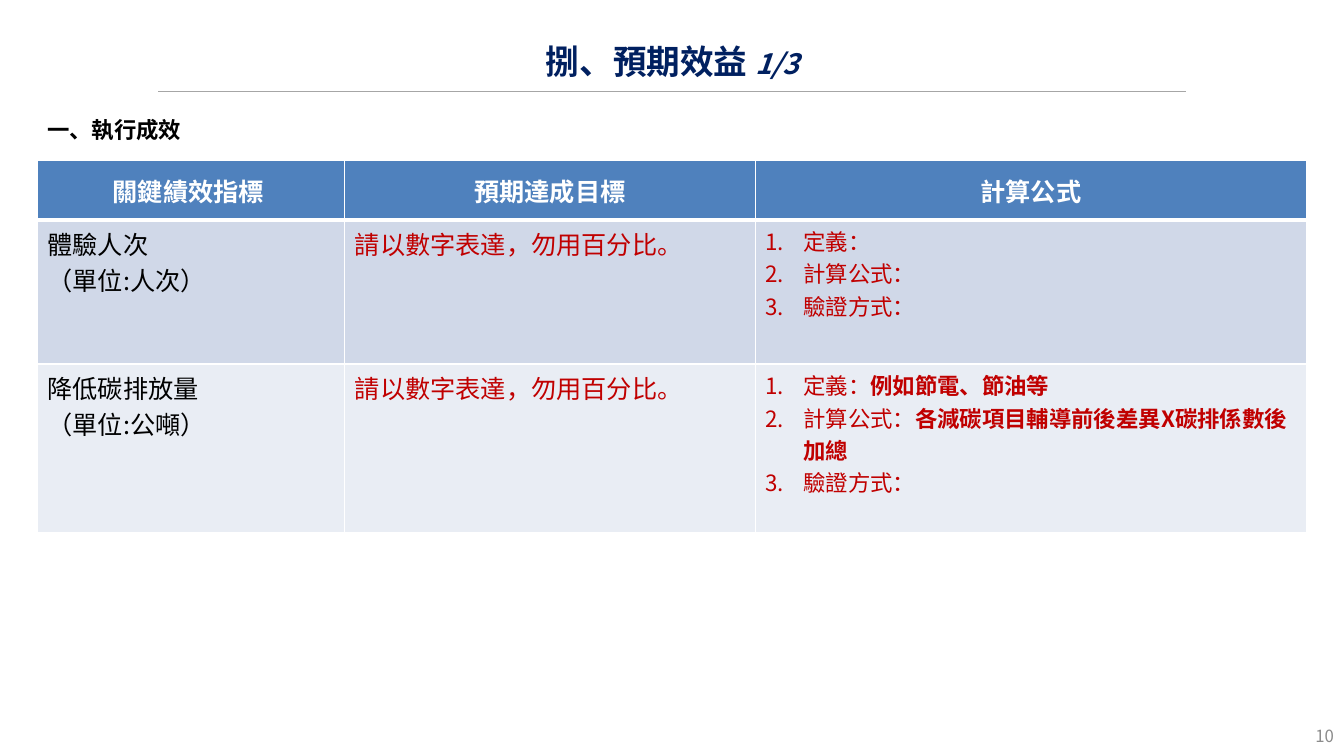
import dataclasses
import typing

import lxml.etree
import pptx
import pptx.dml.color
import pptx.enum.shapes
import pptx.enum.text
import pptx.oxml.ns
import pptx.util

FONT = "Noto Sans CJK SC"
HUES = {
    "navy": "002060",
    "black": "000000",
    "white": "FFFFFF",
    "red": "C00000",
    "gray": "8C8C8C",
    "rule": "A6A6A6",
    "head": "4F81BD",
    "dark": "D0D8E8",
    "light": "E9EDF4",
}
WIDE = pptx.util.Inches(13.33)
HIGH = pptx.util.Inches(7.5)
HANG = pptx.util.Inches(0.38)
COLS = (22.88, 30.53, 41.04)
ROWS = (7.87, 19.07, 22.27)
ALIGN = pptx.enum.text.PP_ALIGN
MID = pptx.enum.text.MSO_ANCHOR.MIDDLE
TOP = pptx.enum.text.MSO_ANCHOR.TOP


@dataclasses.dataclass(frozen=True)
class Run:
    text: str
    bold: bool = False
    slant: bool = False
    size: typing.Optional[float] = None


@dataclasses.dataclass(frozen=True)
class Label:
    box: tuple[float, float, float, float]
    runs: tuple[Run, ...]
    size: float
    hue: str
    align: ALIGN = ALIGN.LEFT
    anchor: typing.Any = TOP


@dataclasses.dataclass(frozen=True)
class Goal:
    name: str
    unit: str
    fill: str
    means: str = ""
    sum: str = ""


LABELS = (
    Label((16.95, 4.13, 66.17, 7.87),
          (Run("捌、預期效益 ", True), Run("1/3", True, True, 20)),
          24, "navy", ALIGN.CENTER, MID),
    Label((2.78, 14.67, 23.03, 4.93),
          (Run("一、執行成效", True),), 16, "black"),
    Label((95, 94.67, 5, 5.33), (Run("10"),), 12, "gray", ALIGN.RIGHT, MID),
)
HEADS = ("關鍵績效指標 ", "預期達成目標", "計算公式")
GOALS = (
    Goal("體驗人次", "（單位:人次）", "dark"),
    Goal("降低碳排放量", "（單位:公噸）", "light",
         "例如節電、節油等", "各減碳項目輔導前後差異X碳排係數後加總"),
)


def across(share: float) -> int:
    return round(WIDE * share / 100)


def down(share: float) -> int:
    return round(HIGH * share / 100)


def color(name: str) -> pptx.dml.color.RGBColor:
    return pptx.dml.color.RGBColor.from_string(HUES[name])


def add(node: typing.Any, tag: str, **attrs: str) -> typing.Any:
    return lxml.etree.SubElement(node, pptx.oxml.ns.qn(tag), attrs)


def write(frame: typing.Any, lines: typing.Sequence[tuple[Run, ...]], *,
          size: float, hue: str, align: ALIGN = ALIGN.LEFT,
          count: bool = False) -> None:
    frame.word_wrap = True
    for spot, runs in enumerate(lines):
        para = frame.paragraphs[0] if spot == 0 else frame.add_paragraph()
        para.alignment = align
        if count:
            props = para._p.get_or_add_pPr()
            props.set("marL", str(HANG))
            props.set("indent", str(-HANG))
            add(props, "a:buFont", typeface=FONT)
            add(props, "a:buAutoNum", type="arabicPeriod")
        for item in runs:
            run = para.add_run()
            run.text = item.text
            run.font.size = pptx.util.Pt(item.size or size)
            run.font.bold = item.bold
            run.font.italic = item.slant
            run.font.color.rgb = color(hue)
            run.font.name = FONT
            add(run._r.get_or_add_rPr(), "a:ea", typeface=FONT)


def label(slide: typing.Any, item: Label) -> None:
    left, top, width, height = item.box
    box = slide.shapes.add_textbox(
        across(left), down(top), across(width), down(height))
    box.text_frame.vertical_anchor = item.anchor
    write(box.text_frame, [item.runs], size=item.size, hue=item.hue,
          align=item.align)


def rule(slide: typing.Any) -> None:
    line = slide.shapes.add_connector(
        pptx.enum.shapes.MSO_CONNECTOR.STRAIGHT,
        across(11.78), down(12.13), across(88.22), down(12.13))
    line.line.color.rgb = color("rule")
    line.line.width = pptx.util.Pt(0.75)
    add(line._element.spPr, "a:effectLst")


def paint(cell: typing.Any, fill: str, top: float, base: float) -> None:
    props = cell._tc.get_or_add_tcPr()
    for side, width in (("L", 1), ("R", 1), ("T", top), ("B", base)):
        edge = add(props, f"a:ln{side}", w=str(pptx.util.Pt(width)))
        add(add(edge, "a:solidFill"), "a:srgbClr", val=HUES["white"])
    cell.fill.solid()
    cell.fill.fore_color.rgb = color(fill)


def table(slide: typing.Any) -> None:
    grid = slide.shapes.add_table(
        len(ROWS), len(COLS), across(2.78), down(21.2),
        across(sum(COLS)), down(sum(ROWS))).table
    for col, share in zip(grid.columns, COLS):
        col.width = across(share)
    for row, share in zip(grid.rows, ROWS):
        row.height = down(share)
    for cell, text in zip(grid.rows[0].cells, HEADS):
        paint(cell, "head", 1, 3)
        cell.vertical_anchor = MID
        write(cell.text_frame, [(Run(text, True),)], size=18, hue="white",
              align=ALIGN.CENTER)
    for spot, goal in enumerate(GOALS, 1):
        cells = list(grid.rows[spot].cells)
        for cell in cells:
            paint(cell, goal.fill, 3 if spot == 1 else 1, 1)
        name, aim, way = (cell.text_frame for cell in cells)
        write(name, [(Run(goal.name),), (Run(goal.unit),)],
              size=18, hue="black")
        write(aim, [(Run("請以數字表達，勿用百分比。"),)], size=18, hue="red")
        steps = (("定義：", goal.means), ("計算公式：", goal.sum),
                 ("驗證方式：", ""))
        lines = [(Run(lead), Run(rest, True)) if rest else (Run(lead),)
                 for lead, rest in steps]
        write(way, lines, size=16, hue="red", count=True)


def main() -> None:
    deck = pptx.Presentation()
    deck.slide_width = WIDE
    deck.slide_height = HIGH
    slide = deck.slides.add_slide(deck.slide_layouts[6])
    rule(slide)
    for item in LABELS:
        label(slide, item)
    table(slide)
    deck.save("out.pptx")


if __name__ == "__main__":
    main()
